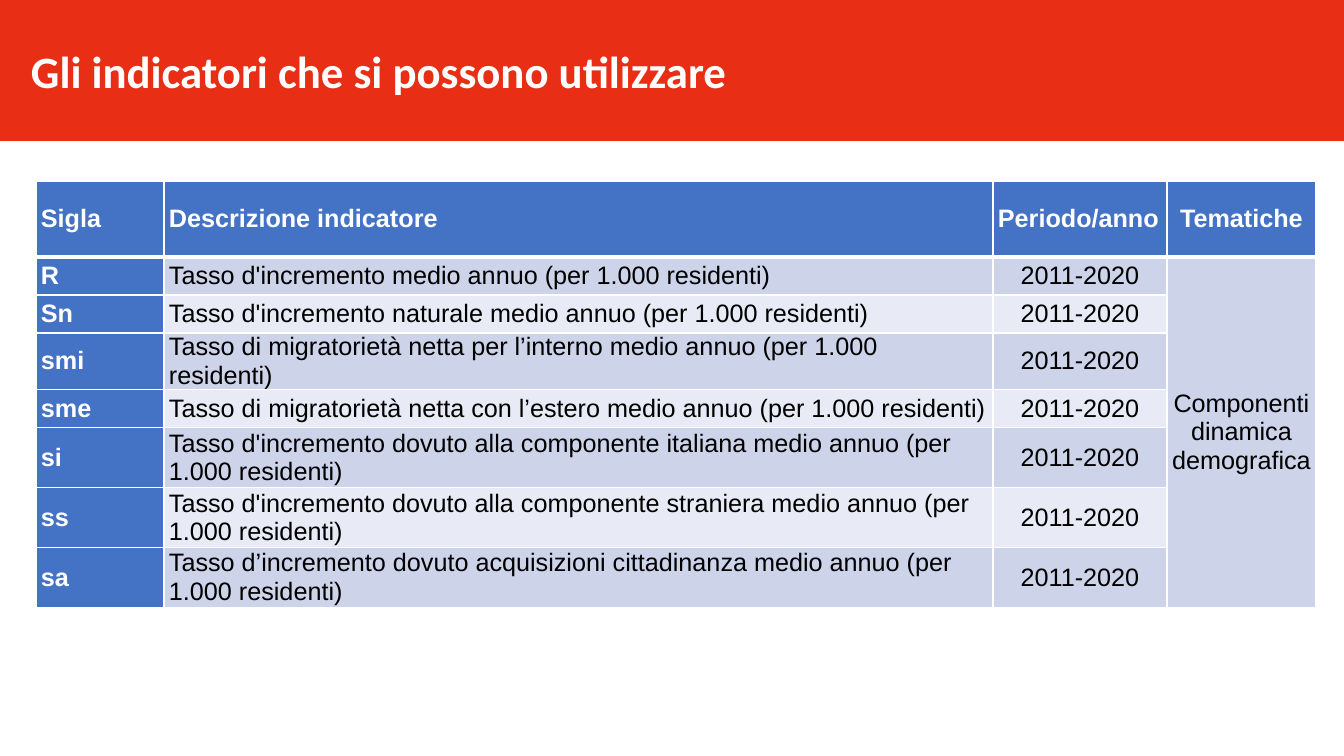
from lxml import etree
from pptx import Presentation
from pptx.dml.color import RGBColor
from pptx.enum.shapes import MSO_SHAPE
from pptx.enum.text import MSO_ANCHOR, PP_ALIGN
from pptx.oxml.ns import qn
from pptx.util import Emu, Pt

RECTANGLE = MSO_SHAPE.RECTANGLE
MIDDLE = MSO_ANCHOR.MIDDLE
LEFT, CENTER = PP_ALIGN.LEFT, PP_ALIGN.CENTER

SLIDE_W, SLIDE_H = 1344, 756
EMU_PER_PX = 12192000 / SLIDE_W

COLORS = {
    "banner": "E92E16",
    "heading": "4472C4",
    "band_dark": "CDD4EA",
    "band_light": "E8EBF5",
    "white": "FFFFFF",
    "black": "000000",
}

TITLE = "Gli indicatori che si possono utilizzare"
HEADINGS = ["Sigla", "Descrizione indicatore", "Periodo/anno", "Tematiche"]
PERIOD = "2011-2020"
THEME = "Componenti dinamica demografica"
# Code, description, row height
INDICATORS = [
    ("R", "Tasso d'incremento medio annuo (per 1.000 residenti)", 38),
    ("Sn", "Tasso d'incremento naturale medio annuo (per 1.000 residenti)", 38),
    ("smi", "Tasso di migratorietà netta per l’interno medio annuo (per 1.000 residenti)", 38),
    ("sme", "Tasso di migratorietà netta con l’estero medio annuo (per 1.000 residenti)", 38),
    ("si", "Tasso d'incremento dovuto alla componente italiana medio annuo (per 1.000 residenti)", 60),
    ("ss", "Tasso d'incremento dovuto alla componente straniera medio annuo (per 1.000 residenti)", 60),
    ("sa", "Tasso d’incremento dovuto acquisizioni cittadinanza medio annuo (per 1.000 residenti)", 60),
]
COLUMN_WIDTHS = [128, 829, 174, 149]
HEADER_HEIGHT = 76


def px(length):
    return Emu(round(length * EMU_PER_PX))


def rgb(name):
    return RGBColor.from_string(COLORS[name])


def style_text(paragraph, font, size, color, bold, align=LEFT):
    paragraph.alignment = align
    for run in paragraph.runs:
        run.font.name = font
        run.font.size = Pt(size)
        run.font.bold = bold
        run.font.color.rgb = rgb(color)


def add_banner(slide, title):
    banner = slide.shapes.add_shape(RECTANGLE, 0, 0, px(SLIDE_W), px(141))
    banner.shadow.inherit = False
    banner.fill.solid()
    banner.fill.fore_color.rgb = rgb("banner")
    banner.line.fill.background()
    frame = banner.text_frame
    frame.margin_left = frame.margin_right = px(31)
    frame.margin_top = frame.margin_bottom = px(16)
    frame.vertical_anchor = MIDDLE
    frame.word_wrap = True
    frame.text = title
    style_text(frame.paragraphs[0], "Calibri", 32, "white", True)


def set_borders(cell, top=1, bottom=1):
    properties = cell._tc.get_or_add_tcPr()
    for side, width in (("L", 1), ("R", 1), ("T", top), ("B", bottom)):
        line = etree.SubElement(properties, qn(f"a:ln{side}"), w=str(Pt(width)))
        fill = etree.SubElement(line, qn("a:solidFill"))
        etree.SubElement(fill, qn("a:srgbClr"), val=COLORS["white"])


def fill_cell(cell, text, fill, heading=False, align=LEFT):
    cell.fill.solid()
    cell.fill.fore_color.rgb = rgb(fill)
    cell.margin_left = cell.margin_right = px(5)
    cell.margin_top = cell.margin_bottom = 0
    cell.vertical_anchor = MIDDLE
    cell.text = text
    color = "white" if heading else "black"
    style_text(cell.text_frame.paragraphs[0], "Arial", 18, color, heading, align)


def add_indicator_table(slide):
    heights = [HEADER_HEIGHT] + [height for _, _, height in INDICATORS]
    table = slide.shapes.add_table(
        len(heights), len(COLUMN_WIDTHS), px(36), px(181),
        px(sum(COLUMN_WIDTHS)), px(sum(heights))).table
    for column, width in zip(table.columns, COLUMN_WIDTHS):
        column.width = px(width)
    for index, height in enumerate(heights):
        table.rows[index].height = px(height)
        for cell in table.rows[index].cells:
            set_borders(cell, top=3 if index == 1 else 1,
                        bottom=3 if index == 0 else 1)

    # Header row
    for column, heading in enumerate(HEADINGS):
        align = CENTER if heading == "Tematiche" else LEFT
        fill_cell(table.cell(0, column), heading, "heading", True, align)

    # One row per indicator, in alternating bands
    for row, (code, description, _) in enumerate(INDICATORS, start=1):
        band = "band_dark" if row % 2 else "band_light"
        fill_cell(table.cell(row, 0), code, "heading", True)
        fill_cell(table.cell(row, 1), description, band)
        fill_cell(table.cell(row, 2), PERIOD, band, align=CENTER)

    # Theme shared by all indicators
    theme = table.cell(1, 3)
    theme.merge(table.cell(len(INDICATORS), 3))
    fill_cell(theme, THEME, "band_dark", align=CENTER)


def main():
    presentation = Presentation()
    presentation.slide_width = px(SLIDE_W)
    presentation.slide_height = px(SLIDE_H)
    slide = presentation.slides.add_slide(presentation.slide_layouts[6])
    add_banner(slide, TITLE)
    add_indicator_table(slide)
    presentation.save("out.pptx")


if __name__ == "__main__":
    main()
